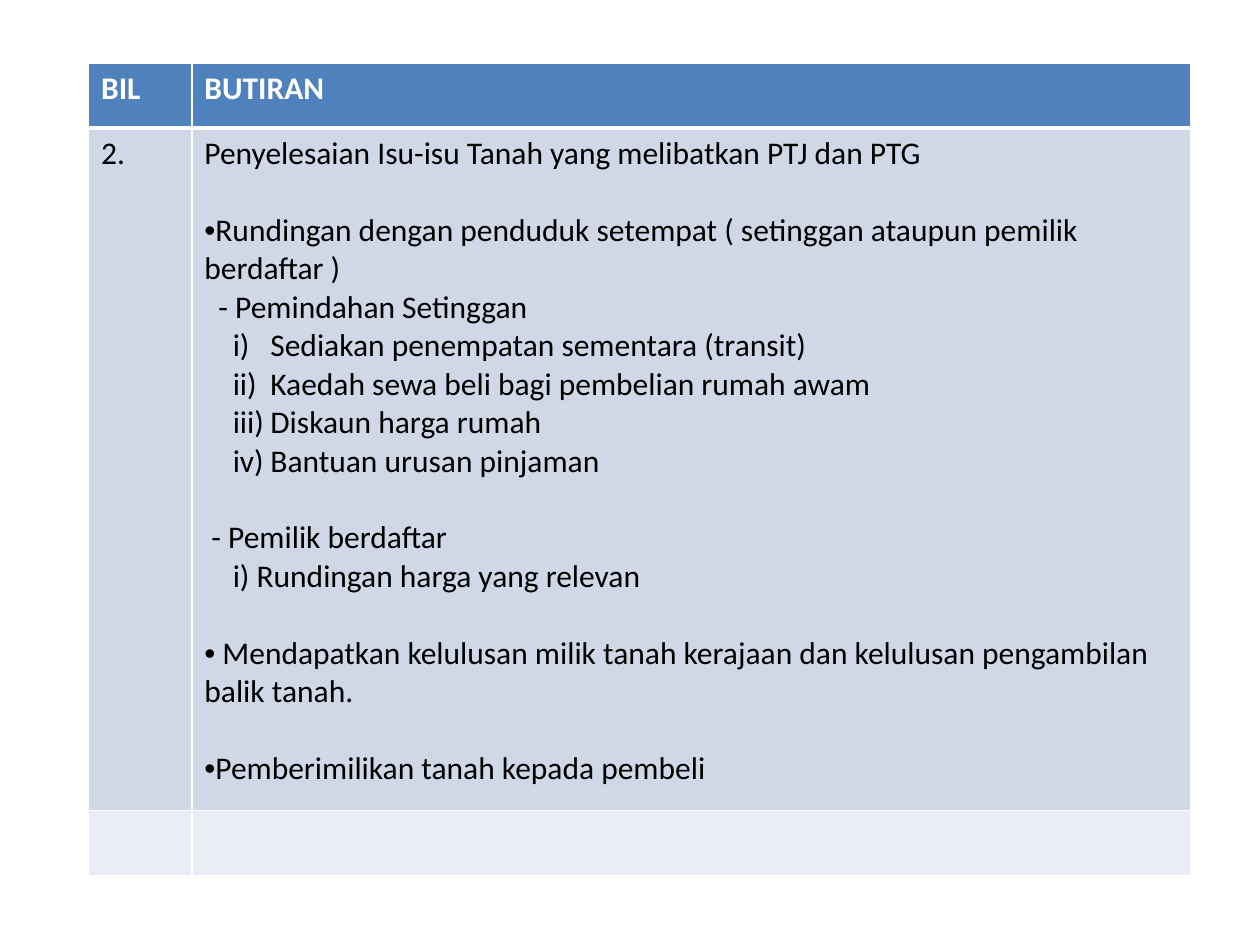
from dataclasses import dataclass

from lxml.etree import SubElement
from pptx import Presentation
from pptx.dml.color import RGBColor
from pptx.oxml.ns import qn
from pptx.table import _Cell
from pptx.util import Pt

COLORS = {
    "header": "4F81BD",
    "body": "D0D8E8",
    "footer": "E9EDF4",
    "border": "FFFFFF",
    "header_text": "FFFFFF",
    "body_text": "000000",
}
FONT, FONT_SIZE = "Calibri", Pt(18)
BLANK_LINE = 22
THIN, THICK = 1, 3
COLUMN_WIDTHS = (59.04, 570.96)
ROW_HEIGHTS = (37.2, 390, 37.2)


@dataclass
class Line:
    text: str
    left: float = 0
    hang: float = 0
    bullet: bool = False
    gap_before: bool = False


@dataclass
class Row:
    fill: str
    text_color: str
    cells: tuple[list[Line], list[Line]]
    bold: bool = False
    top: float = THIN
    bottom: float = THIN


def numbered(numeral: str, text: str) -> Line:
    return Line(f"{numeral})\t{text}", left=37.7, hang=21.5)


DETAILS = [
    Line("Penyelesaian Isu-isu Tanah yang melibatkan PTJ dan PTG"),
    Line("Rundingan dengan penduduk setempat ( setinggan ataupun pemilik berdaftar )",
         bullet=True, gap_before=True),
    Line("- Pemindahan Setinggan", left=8),
    numbered("i", "Sediakan penempatan sementara (transit)"),
    numbered("ii", "Kaedah sewa beli bagi pembelian rumah awam"),
    numbered("iii", "Diskaun harga rumah"),
    numbered("iv", "Bantuan urusan pinjaman"),
    Line("- Pemilik berdaftar", left=4, gap_before=True),
    Line("i) Rundingan harga yang relevan", left=16.2),
    Line(" Mendapatkan kelulusan milik tanah kerajaan dan kelulusan pengambilan balik tanah.",
         bullet=True, gap_before=True),
    Line("Pemberimilikan tanah kepada pembeli", bullet=True, gap_before=True),
]
ROWS = [
    Row("header", "header_text", ([Line("BIL")], [Line("BUTIRAN")]), bold=True, bottom=THICK),
    Row("body", "body_text", ([Line("2.")], DETAILS), top=THICK),
    Row("footer", "body_text", ([], [])),
]


def set_borders(cell: _Cell, row: Row) -> None:
    properties = cell._tc.get_or_add_tcPr()
    for side, width in (("L", THIN), ("R", THIN), ("T", row.top), ("B", row.bottom)):
        border = SubElement(properties, qn(f"a:ln{side}"), w=str(Pt(width)))
        fill = SubElement(border, qn("a:solidFill"))
        SubElement(fill, qn("a:srgbClr"), val=COLORS["border"])


def write_lines(cell: _Cell, lines: list[Line], row: Row) -> None:
    frame = cell.text_frame
    for index, line in enumerate(lines):
        paragraph = frame.add_paragraph() if index else frame.paragraphs[0]
        paragraph.text = line.text
        if line.gap_before:
            paragraph.space_before = Pt(BLANK_LINE)
        properties = paragraph._p.get_or_add_pPr()
        properties.set("marL", str(Pt(line.left)))
        properties.set("indent", str(-Pt(line.hang)))
        if line.bullet:
            SubElement(properties, qn("a:buFont"), typeface="Arial")
            SubElement(properties, qn("a:buChar"), char="•")
        font = paragraph.font
        font.name, font.size, font.bold = FONT, FONT_SIZE, row.bold
        font.color.rgb = RGBColor.from_string(COLORS[row.text_color])


def fill_cell(cell: _Cell, lines: list[Line], row: Row) -> None:
    set_borders(cell, row)
    cell.fill.solid()
    cell.fill.fore_color.rgb = RGBColor.from_string(COLORS[row.fill])
    write_lines(cell, lines, row)


def main() -> None:
    presentation = Presentation()
    presentation.slide_width, presentation.slide_height = Pt(720), Pt(540)
    slide = presentation.slides.add_slide(presentation.slide_layouts[6])
    issues = slide.shapes.add_table(
        len(ROWS), len(COLUMN_WIDTHS), Pt(50.6), Pt(36),
        Pt(sum(COLUMN_WIDTHS)), Pt(sum(ROW_HEIGHTS)),
    ).table
    issues.horz_banding = False
    for column, width in zip(issues.columns, COLUMN_WIDTHS):
        column.width = Pt(width)
    for table_row, height, row in zip(issues.rows, ROW_HEIGHTS, ROWS):
        table_row.height = Pt(height)
        for cell, lines in zip(table_row.cells, row.cells):
            fill_cell(cell, lines, row)
    presentation.save("out.pptx")


if __name__ == "__main__":
    main()
